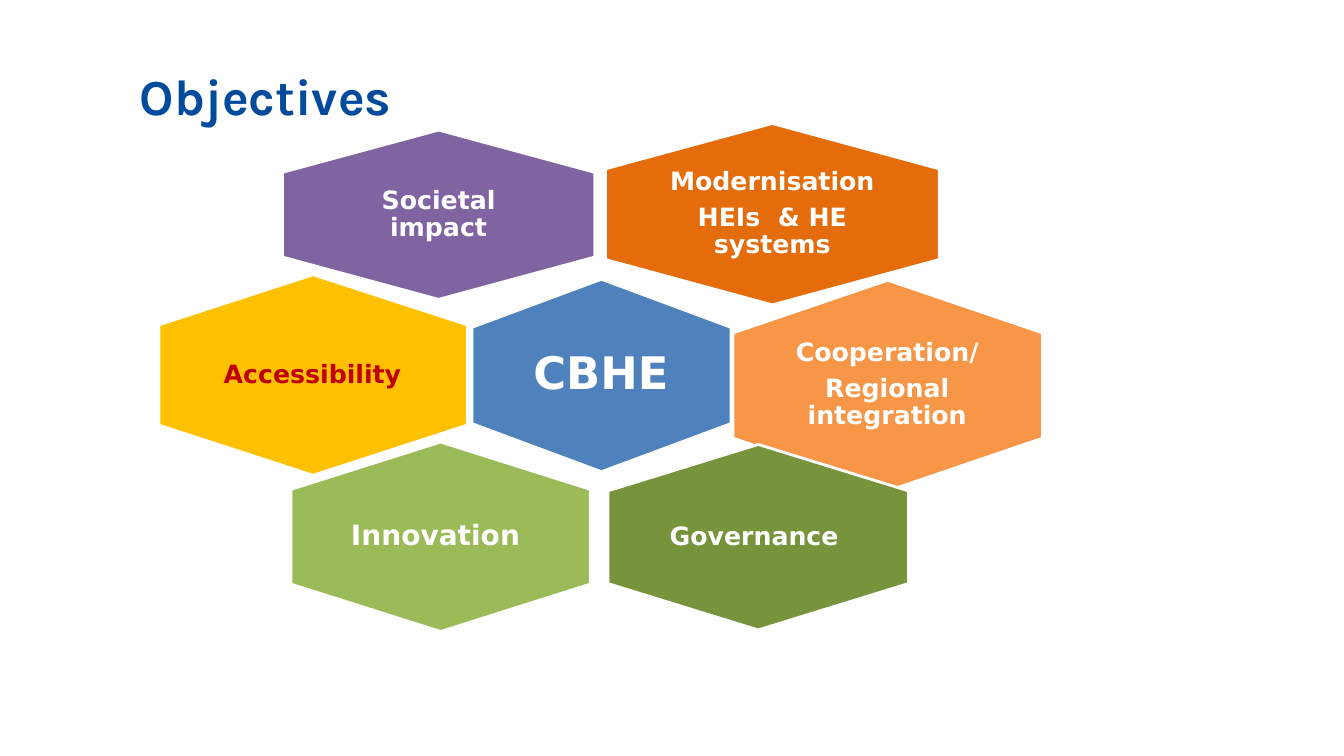
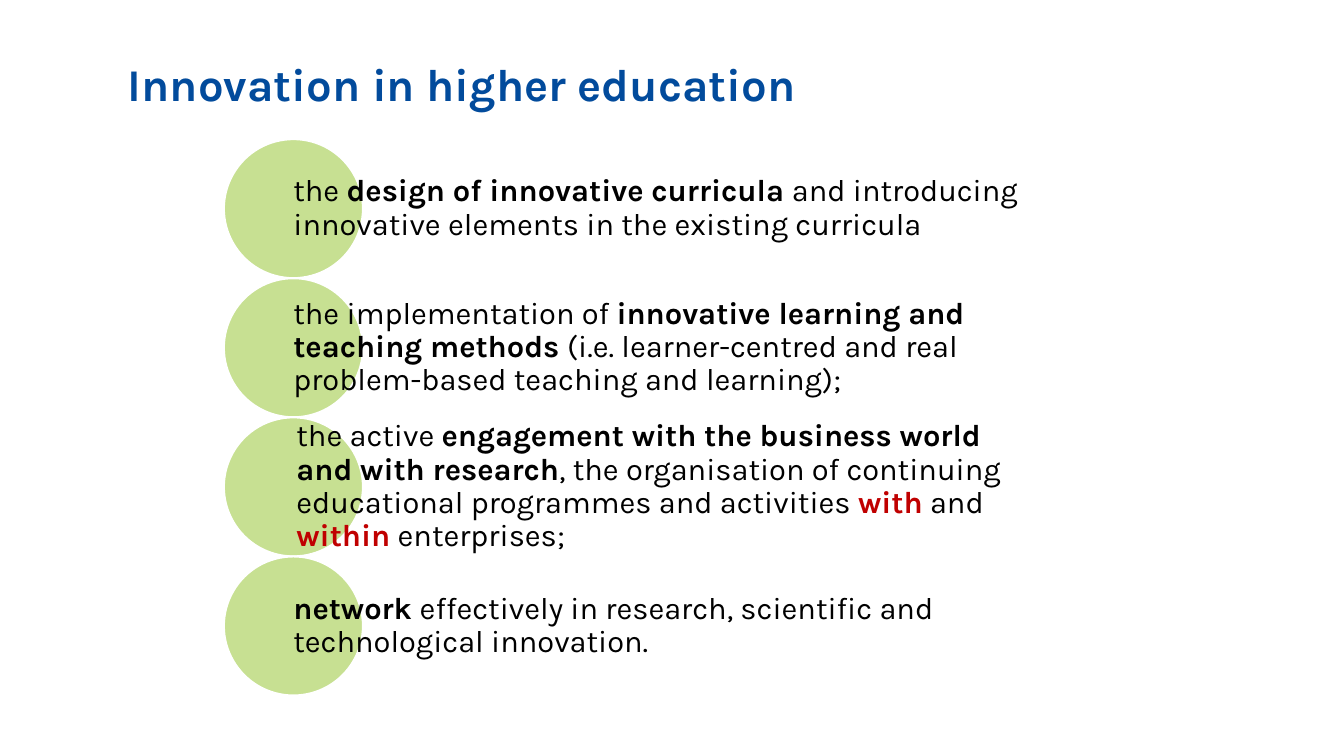
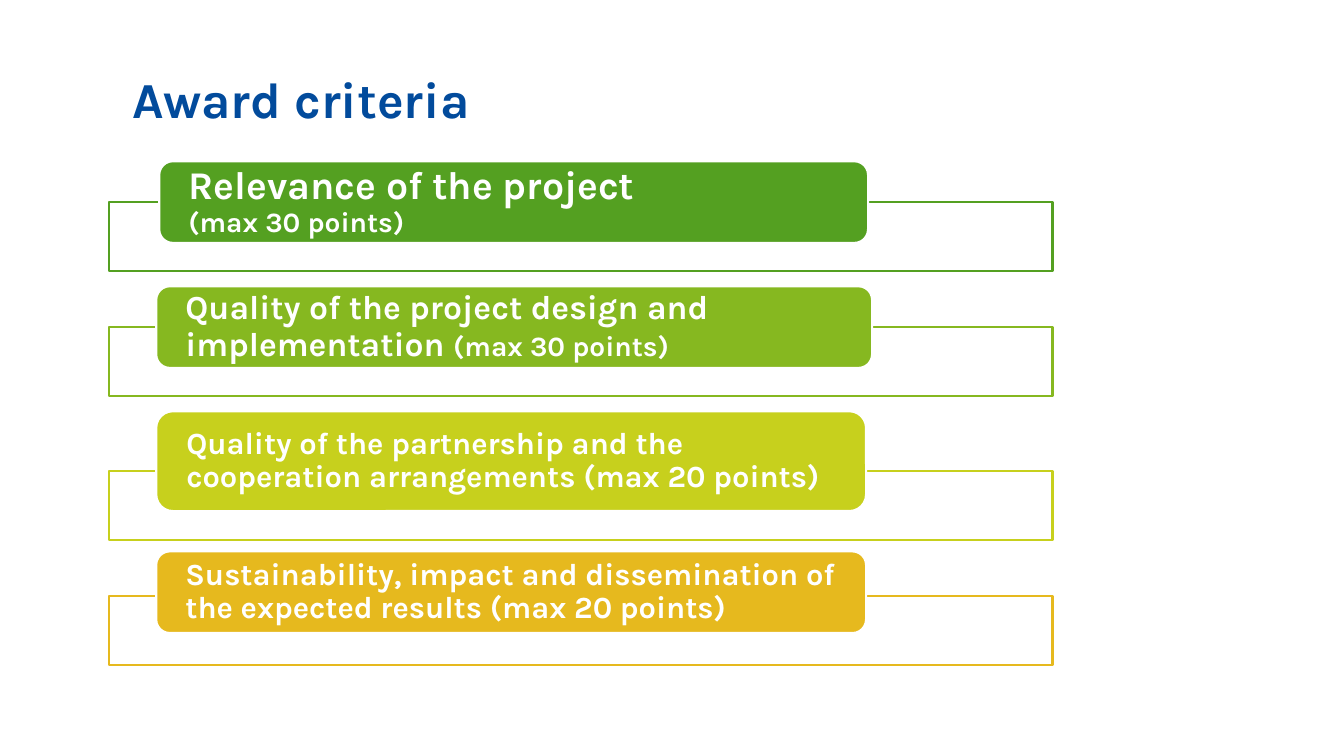
from lxml import etree
from pptx import Presentation
from pptx import util as u
from pptx.dml.color import RGBColor
from pptx.enum import shapes, text
from pptx.oxml import ns

PX = 9144  # EMU in one px, 100 px to the inch

WHITE = RGBColor(0xFF, 0xFF, 0xFF)
BLACK = RGBColor(0x00, 0x00, 0x00)
NAVY = RGBColor(0x02, 0x4B, 0x9C)
RED = RGBColor(0xC0, 0x00, 0x00)
PURPLE = RGBColor(0x80, 0x64, 0xA2)
ORANGE = RGBColor(0xE4, 0x6C, 0x0A)
PEACH = RGBColor(0xF7, 0x96, 0x46)
BLUE = RGBColor(0x4F, 0x81, 0xBD)
AMBER = RGBColor(0xFF, 0xC0, 0x00)
OLIVE = RGBColor(0x77, 0x93, 0x3C)
SAGE = RGBColor(0x9B, 0xBB, 0x59)
LEAF = RGBColor(0x90, 0xC2, 0x26)
GREEN = RGBColor(0x54, 0xA0, 0x21)
GRASS = RGBColor(0x86, 0xB8, 0x20)
LIME = RGBColor(0xC7, 0xD0, 0x1D)
GOLD = RGBColor(0xE6, 0xB9, 0x1E)

BODY_FONT = "Karla"
LABEL_FONT = "DejaVu Sans"
MIDDLE, TOP = text.MSO_ANCHOR.MIDDLE, text.MSO_ANCHOR.TOP
LEFT, CENTER = text.PP_ALIGN.LEFT, text.PP_ALIGN.CENTER


class Slides:
    """Holds the deck, its style and the current slide."""

    def __init__(self):
        self.deck = Presentation()
        self.deck.slide_width = u.Inches(13.33)
        self.deck.slide_height = u.Inches(7.5)
        self.page = None

    def new_page(self, title, left, top, size=36):
        self.page = self.deck.slides.add_slide(self.deck.slide_layouts[6])
        self.textbox(left, top, 940, 72, [[(title, size, True, NAVY)]],
                     anchor=TOP, margins=(10, 5), spacing=1)

    def shape(self, kind, left, top, width, height, fill, line, weight=1.5):
        shape = self.page.shapes.add_shape(
            kind, left * PX, top * PX, width * PX, height * PX)
        shape.shadow.inherit = False
        shape.fill.solid()
        shape.fill.fore_color.rgb = fill
        shape.line.color.rgb = line
        shape.line.width = u.Pt(weight)
        return shape

    def textbox(self, left, top, width, height, paras, **style):
        box = self.page.shapes.add_textbox(
            left * PX, top * PX, width * PX, height * PX)
        self.set_text(box, paras, **style)

    def set_text(self, box, paras, font=BODY_FONT, align=LEFT, anchor=MIDDLE,
                 margins=(0, 0), spacing=0.9, gap=0):
        """Each paragraph is a list of (words, size, bold, colour) runs."""
        frame = box.text_frame
        frame.word_wrap = True
        frame.vertical_anchor = anchor
        frame.margin_left = frame.margin_right = margins[0] * PX
        frame.margin_top = frame.margin_bottom = margins[1] * PX
        for index, runs in enumerate(paras):
            para = frame.add_paragraph() if index else frame.paragraphs[0]
            para.alignment = align
            para.line_spacing = spacing
            if index:
                para.space_before = u.Pt(gap)
            for words, size, bold, colour in runs:
                span = para.add_run()
                span.text = words
                span.font.name = font
                span.font.size = u.Pt(size)
                span.font.bold = bold
                span.font.color.rgb = colour

    def hexagon(self, x, y, width, height, fill, lines, size=18,
                colour=WHITE, shift=0):
        """Upright hexagon centred on x, y with its label on top."""
        shape = self.shape(shapes.MSO_SHAPE.HEXAGON, x - height // 2,
                           y - width // 2, height, width, fill, WHITE, 2)
        shape.rotation = 90
        shape.adjustments[0] = 0.25
        self.textbox(x - 102 + shift, y - 60, 204, 120,
                     [[(line, size, True, colour)] for line in lines],
                     font=LABEL_FONT, align=CENTER, gap=6.3)

    def circle(self, left, top, size, fill, opacity):
        shape = self.shape(shapes.MSO_SHAPE.OVAL, left, top, size, size,
                           fill, WHITE)
        tint = shape.element.spPr.find(
            ns.qn("a:solidFill")).find(ns.qn("a:srgbClr"))
        etree.SubElement(tint, ns.qn("a:alpha"), val=str(opacity * 1000))

    def criterion(self, frame_top, left, top, width, height, colour, paras):
        """Outlined frame with a filled heading bar over its top edge."""
        self.shape(shapes.MSO_SHAPE.RECTANGLE, 108, frame_top, 936, 69,
                   WHITE, colour)
        bar = self.shape(shapes.MSO_SHAPE.ROUNDED_RECTANGLE, left, top,
                         width, height, colour, WHITE)
        self.set_text(bar, [[(words, size, True, WHITE)
                             for words, size in runs] for runs in paras],
                      margins=(25, 0))


def objectives(slides):
    slides.new_page("Objectives", 129, 60)
    slides.hexagon(766, 212, 331, 180, ORANGE,
                   ["Modernisation", "HEIs  & HE systems"])
    slides.hexagon(435, 213, 310, 168, PURPLE, ["Societal impact"])
    slides.hexagon(596, 372, 257, 191, BLUE, ["CBHE"], size=32)
    slides.hexagon(880, 382, 307, 209, PEACH,
                   ["Cooperation/", "Regional integration"])
    slides.hexagon(752, 533, 298, 184, OLIVE, ["Governance"], shift=-4)
    slides.hexagon(437, 532, 297, 188, SAGE, ["Innovation"], size=20, shift=-5)
    slides.hexagon(310, 372, 306, 199, AMBER, ["Accessibility"], colour=RED)


def innovation(slides):
    slides.new_page("Innovation in higher education", 117, 51, size=32.4)
    # Text left, then runs of (words, bold, colour)
    points = [
        (291, [("the ", False, BLACK),
               ("design of innovative curricula ", True, BLACK),
               ("and introducing innovative elements in the existing "
                "curricula", False, BLACK)]),
        (291, [("the implementation of ", False, BLACK),
               ("innovative learning and teaching methods ", True, BLACK),
               ("(i.e. learner-centred and real problem-based teaching "
                "and learning);", False, BLACK)]),
        (294, [("the active ", False, BLACK),
               ("engagement with the business world and with research",
                True, BLACK),
               (", the organisation of continuing educational programmes "
                "and activities ", False, BLACK),
               ("with", True, RED), (" and ", False, BLACK),
               ("within", True, RED), (" enterprises;", False, BLACK)]),
        (291, [("network ", True, BLACK),
               ("effectively in research, scientific and technological "
                "innovation.", False, BLACK)]),
    ]
    size = 138
    for index, (left, runs) in enumerate(points):
        top = size * (index + 1)
        slides.circle(222, top, size, LEAF, 50)
        slides.textbox(left, top, 735, size,
                       [[(words, 22, bold, colour)
                         for words, bold, colour in runs]], margins=(0, 3))


def award_criteria(slides):
    slides.new_page("Award criteria", 122, 63)
    slides.criterion(200, 158, 160, 703, 81, GREEN,
                     [[("Relevance of the project", 28)],
                      [("(max 30 points)", 20)]])
    slides.criterion(324, 155, 284, 710, 81, GRASS,
                     [[("Quality of the project design and implementation ",
                        24), ("(max 30 points)", 20)]])
    slides.criterion(467, 155, 408, 704, 99, LIME,
                     [[("Quality of the partnership and the cooperation "
                        "arrangements (max 20 points)", 22)]])
    slides.criterion(591, 155, 547, 704, 81, GOLD,
                     [[("Sustainability, impact and dissemination of the "
                        "expected results (max 20 points)", 22)]])


def main():
    slides = Slides()
    objectives(slides)
    innovation(slides)
    award_criteria(slides)
    slides.deck.save("out.pptx")


if __name__ == "__main__":
    main()
